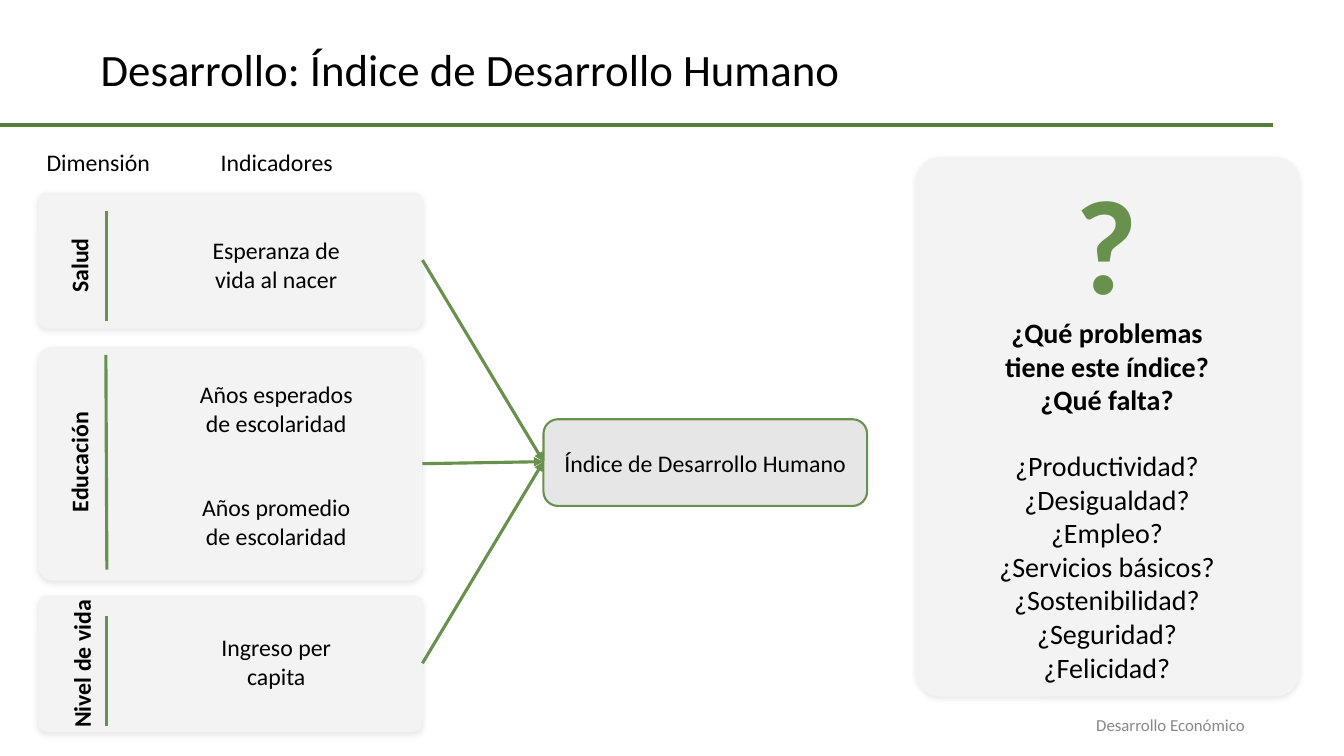
"""Build the Human Development Index slide."""
from lxml import etree
from pptx import Presentation
from pptx.dml.color import RGBColor
from pptx.enum.shapes import MSO_CONNECTOR, MSO_SHAPE
from pptx.enum.text import MSO_ANCHOR, PP_ALIGN
from pptx.oxml import parse_xml
from pptx.oxml.ns import nsdecls, qn
from pptx.util import Pt

PX = 9144
STRAIGHT = MSO_CONNECTOR.STRAIGHT
ROUNDED = MSO_SHAPE.ROUNDED_RECTANGLE
TOP, MIDDLE = MSO_ANCHOR.TOP, MSO_ANCHOR.MIDDLE
LEFT, CENTER = PP_ALIGN.LEFT, PP_ALIGN.CENTER

FONT = "Calibri"
BLACK, GRAY, CARD_FILL, INDEX_FILL = "000000", "888888", "F3F3F3", "E7E6E6"
GREEN, DARK_GREEN = "69914E", "548135"

TITLE = "Desarrollo: Índice de Desarrollo Humano"
FOOTER = "Desarrollo Económico"
INDEX = "Índice de Desarrollo Humano"
HEADINGS = [("Dimensión", 30), ("Indicadores", 207)]
DIMENSIONS = [
    dict(name="Salud", card=(191, 135), center=(78, 263), width=135,
         rule=(106, 209, 106, 318),
         indicators=[("Esperanza de vida al nacer", 224)]),
    dict(name="Educación", card=(344, 232), center=(78, 458), width=135,
         rule=(105, 352, 106, 565),
         indicators=[("Años esperados de escolaridad", 367),
                     ("Años promedio de escolaridad", 479)]),
    dict(name="Nivel de vida", card=(591, 135), center=(81, 658), width=150,
         rule=(106, 611, 106, 720),
         indicators=[("Ingreso per capita", 618)]),
]
QUESTIONS = ["¿Qué problemas tiene este índice?", "¿Qué falta?"]
GAPS = ["¿Productividad?", "¿Desigualdad?", "¿Empleo?", "¿Servicios básicos?",
        "¿Sostenibilidad?", "¿Seguridad?", "¿Felicidad?"]

CARD_LEFT, CARD_WIDTH = 38, 381
INDEX_BOX = (539, 416, 321, 86)
PANEL_BOX = (908, 156, 381, 535)
LABEL_HEIGHT = 49

deck = Presentation()
deck.slide_width, deck.slide_height = 1333 * PX, 750 * PX
page = deck.slides.add_slide(deck.slide_layouts[6])


def color(value):
    return RGBColor.from_string(value)


def scaled(lengths):
    return [length * PX for length in lengths]


def write(shape, lines, size=17, ink=BLACK, bold=False, align=CENTER,
          anchor=TOP, inset=10, spacing=None):
    frame = shape.text_frame
    frame.word_wrap = True
    frame.vertical_anchor = anchor
    frame.margin_left = frame.margin_right = 10 * PX
    frame.margin_top = frame.margin_bottom = inset * PX
    for number, line in enumerate(lines):
        para = frame.add_paragraph() if number else frame.paragraphs[0]
        para.alignment = align
        if spacing:
            para.line_spacing = spacing
        span = para.add_run()
        span.text = line
        span.font.name, span.font.size, span.font.bold = FONT, Pt(size), bold
        span.font.color.rgb = color(ink)


def add_text(lines, box, rotation=0, **style):
    shape = page.shapes.add_textbox(*scaled(box))
    shape.rotation = rotation
    write(shape, lines, **style)


def add_rounded(box, fill, corner):
    shape = page.shapes.add_shape(ROUNDED, *scaled(box))
    shape.adjustments[0] = corner
    shape.shadow.inherit = False
    shape.fill.solid()
    shape.fill.fore_color.rgb = color(fill)
    shape.line.fill.background()
    return shape


def add_card(box):
    card = add_rounded(box, CARD_FILL, 0.064)
    effects = card.element.spPr.find(qn("a:effectLst"))
    effects.append(parse_xml(
        f'<a:outerShdw {nsdecls("a")} blurRad="{Pt(4.5)}" dist="{Pt(1.5)}" '
        'dir="5400000" algn="t" rotWithShape="0"><a:srgbClr val="000000">'
        '<a:alpha val="9000"/></a:srgbClr></a:outerShdw>'))


def add_line(ends, ink=GREEN, arrow=False):
    line = page.shapes.add_connector(STRAIGHT, *scaled(ends))
    line.line.color.rgb = color(ink)
    line.line.width = Pt(2.25)
    if arrow:
        etree.SubElement(line.line._get_or_add_ln(), qn("a:tailEnd"), type="triangle")
    etree.SubElement(line.element.spPr, qn("a:effectLst"))


add_line((0, 124, 1263, 124), ink=DARK_GREEN)
add_text([TITLE], (90, 28, 965, 86), size=32, align=LEFT, anchor=MIDDLE,
         inset=5, spacing=0.9)
add_text([FOOTER], (1018, 699, 286, 40), size=12, ink=GRAY, anchor=MIDDLE, inset=5)

for heading, left in HEADINGS:
    add_text([heading], (left, 137, 135, LABEL_HEIGHT))

index = add_rounded(INDEX_BOX, INDEX_FILL, 0.167)
index.line.color.rgb = color(GREEN)
index.line.width = Pt(1.5)
write(index, [INDEX], anchor=MIDDLE)
index_left, index_middle = INDEX_BOX[0], INDEX_BOX[1] + INDEX_BOX[3] // 2 - 1

for dimension in DIMENSIONS:
    top, height = dimension["card"]
    center_x, center_y = dimension["center"]
    width = dimension["width"]
    add_card((CARD_LEFT, top, CARD_WIDTH, height))
    add_line(dimension["rule"])
    add_text([dimension["name"]],
             (center_x - width // 2, center_y - LABEL_HEIGHT // 2, width, LABEL_HEIGHT),
             rotation=270, bold=True)
    for indicator, indicator_top in dimension["indicators"]:
        add_text([indicator], (187, indicator_top, 174, 77))
    add_line((CARD_LEFT + CARD_WIDTH, top + height // 2, index_left, index_middle),
             arrow=True)

add_card(PANEL_BOX)
add_text(["?"], (992, 149, 212, 182), size=96, ink=GREEN, bold=True)
add_text(QUESTIONS, (980, 303, 236, 121), size=20, bold=True)
add_text(GAPS, (928, 435, 340, 256), size=20)

deck.save("out.pptx")
